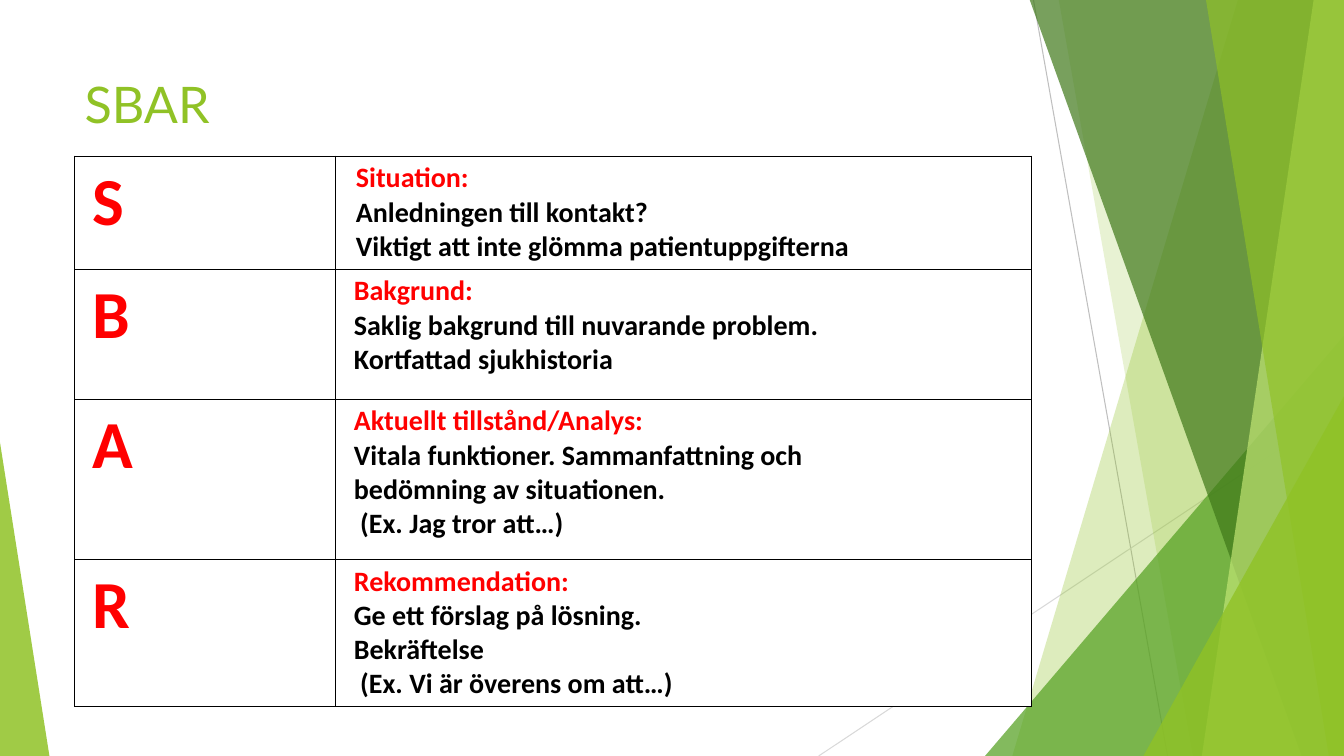
from lxml import etree
from pptx import Presentation
from pptx.dml.color import RGBColor
from pptx.enum.shapes import MSO_CONNECTOR, MSO_SHAPE
from pptx.enum.text import MSO_ANCHOR
from pptx.oxml import parse_xml
from pptx.oxml.ns import nsdecls, qn
from pptx.util import Inches, Pt

COLORS = {
    "lime": "90C226", "green": "54A021", "forest": "3F7819", "pale": "C0E474",
    "grey": "BFBFBF", "light_grey": "D9D9D9",
    "red": "FF0000", "black": "000000", "white": "FFFFFF",
}


def write(paragraph, text, *, size, color, font="Calibri", bold=True, margin=0, indent=0):
    paragraph.text = text
    paragraph.font.size = Pt(size)
    paragraph.font.bold = bold
    paragraph.font.name = font
    paragraph.font.color.rgb = RGBColor.from_string(COLORS[color])
    # The font must reach every run, also after a line break
    for run in paragraph.runs:
        run.font.size, run.font.bold, run.font.name = Pt(size), bold, font
        run.font.color.rgb = RGBColor.from_string(COLORS[color])
    properties = paragraph._p.get_or_add_pPr()
    properties.set("marL", str(Inches(margin)))
    properties.set("indent", str(Inches(indent)))


def paint(shape, color, opacity):
    shape.shadow.inherit = False
    shape.line.fill.background()
    shape.fill.solid()
    shape.fill.fore_color.rgb = RGBColor.from_string(COLORS[color])
    tone = shape.fill._xPr.find(qn("a:solidFill"))[0]
    etree.SubElement(tone, qn("a:alpha")).set("val", str(opacity * 1000))


prs = Presentation()
prs.slide_width, prs.slide_height = Inches(13.33), Inches(7.5)
slide = prs.slides.add_slide(prs.slide_layouts[6])
shapes = slide.shapes

# Thin lines behind the facets
for x1, y1, x2, y2, color in [
    (10.25, 0, 11.58, 7.5, "grey"),
    (13.33, 4.03, 8.12, 7.5, "light_grey"),
]:
    ray = shapes.add_connector(
        MSO_CONNECTOR.STRAIGHT, Inches(x1), Inches(y1), Inches(x2), Inches(y2))
    ray.line.width = Pt(0.75)
    ray.line.color.rgb = RGBColor.from_string(COLORS[color])
    etree.SubElement(ray._element.spPr, qn("a:effectLst"))

# Green facets, back to front: bands (top x, bottom x) reach the right edge,
# triangles have (left, top, width, height, apex)
facets = [
    ((12.28, 10.04), "lime", 30),
    ((10.5, 11.83), "lime", 20),
    ((9.77, 3.33, 3.56, 4.17, 1), "green", 72),
    ((10.21, 12.91), "forest", 70),
    ((13.03, 11.92), "pale", 70),
    ((11.96, 13.18), "lime", 65),
    ((11.34, 3.93, 1.99, 3.57, 1), "lime", 80),
    ((0, 4.39, 0.49, 3.11, 0), "lime", 85),
]
for geometry, color, opacity in facets:
    if len(geometry) == 2:
        top_x, bottom_x = geometry
        outline = shapes.build_freeform(Inches(top_x), Inches(-0.01))
        outline.add_line_segments(
            [(Inches(x), Inches(y))
             for x, y in [(13.33, -0.01), (13.33, 7.5), (bottom_x, 7.5)]], close=True)
        facet = outline.convert_to_shape()
    else:
        *box, apex = geometry
        facet = shapes.add_shape(MSO_SHAPE.ISOSCELES_TRIANGLE, *map(Inches, box))
        facet.adjustments[0] = apex
    paint(facet, color, opacity)

# Title
title = shapes.add_textbox(Inches(0.74), Inches(0.67), Inches(9.4), Inches(0.71)).text_frame
title.word_wrap = True
title.vertical_anchor = MSO_ANCHOR.MIDDLE
write(title.paragraphs[0], "SBAR", size=36, color="lime", font="Lato", bold=False)

# SBAR table: letter, row height, paragraph indents, heading and lines
steps = [
    ("S", 1.12, (0, 0.02),
     ["Situation:", "Anledningen till kontakt?",
      "Viktigt att inte glömma patientuppgifterna"]),
    ("B", 1.29, (0, 0),
     ["Bakgrund:", "Saklig bakgrund till nuvarande problem.", "Kortfattad sjukhistoria"]),
    ("A", 1.59, (0, 0),
     ["Aktuellt tillstånd/Analys:", "Vitala funktioner. Sammanfattning och",
      "bedömning av situationen. \v (Ex. Jag tror att…)"]),
    ("R", 1.46, (0.38, -0.38),
     ["Rekommendation:", "Ge ett förslag på lösning.", "Bekräftelse",
      " (Ex. Vi är överens om att…)"]),
]
sbar = shapes.add_table(
    len(steps), 2, Inches(0.74), Inches(1.55), Inches(9.49), Inches(5.46)).table
sbar.first_row = sbar.horz_banding = False
sbar.columns[0].width, sbar.columns[1].width = Inches(2.59), Inches(6.9)

for row, (letter, height, (margin, indent), lines) in enumerate(steps):
    sbar.rows[row].height = Inches(height)
    letter_cell, text_cell = sbar.cell(row, 0), sbar.cell(row, 1)
    write(letter_cell.text_frame.paragraphs[0], letter,
          size=48, color="red", margin=0.38, indent=-0.38)
    for number, line in enumerate(lines):
        frame = text_cell.text_frame
        paragraph = frame.add_paragraph() if number else frame.paragraphs[0]
        write(paragraph, line, size=20, color="black" if number else "red",
              margin=margin, indent=indent)

    # Margins, fill and borders
    for cell in (letter_cell, text_cell):
        cell.margin_left = cell.margin_right = Inches(0.18)
        cell.margin_top = cell.margin_bottom = Inches(0.05)
        cell.fill.solid()
        cell.fill.fore_color.rgb = RGBColor.from_string(COLORS["white"])
        for place, side in enumerate(["lnL", "lnR", "lnT", "lnB"]):
            cell._tc.tcPr.insert(place, parse_xml(
                f'<a:{side} {nsdecls("a")} w="{Pt(1)}"><a:solidFill>'
                f'<a:srgbClr val="{COLORS["black"]}"/></a:solidFill></a:{side}>'))

prs.save("out.pptx")
